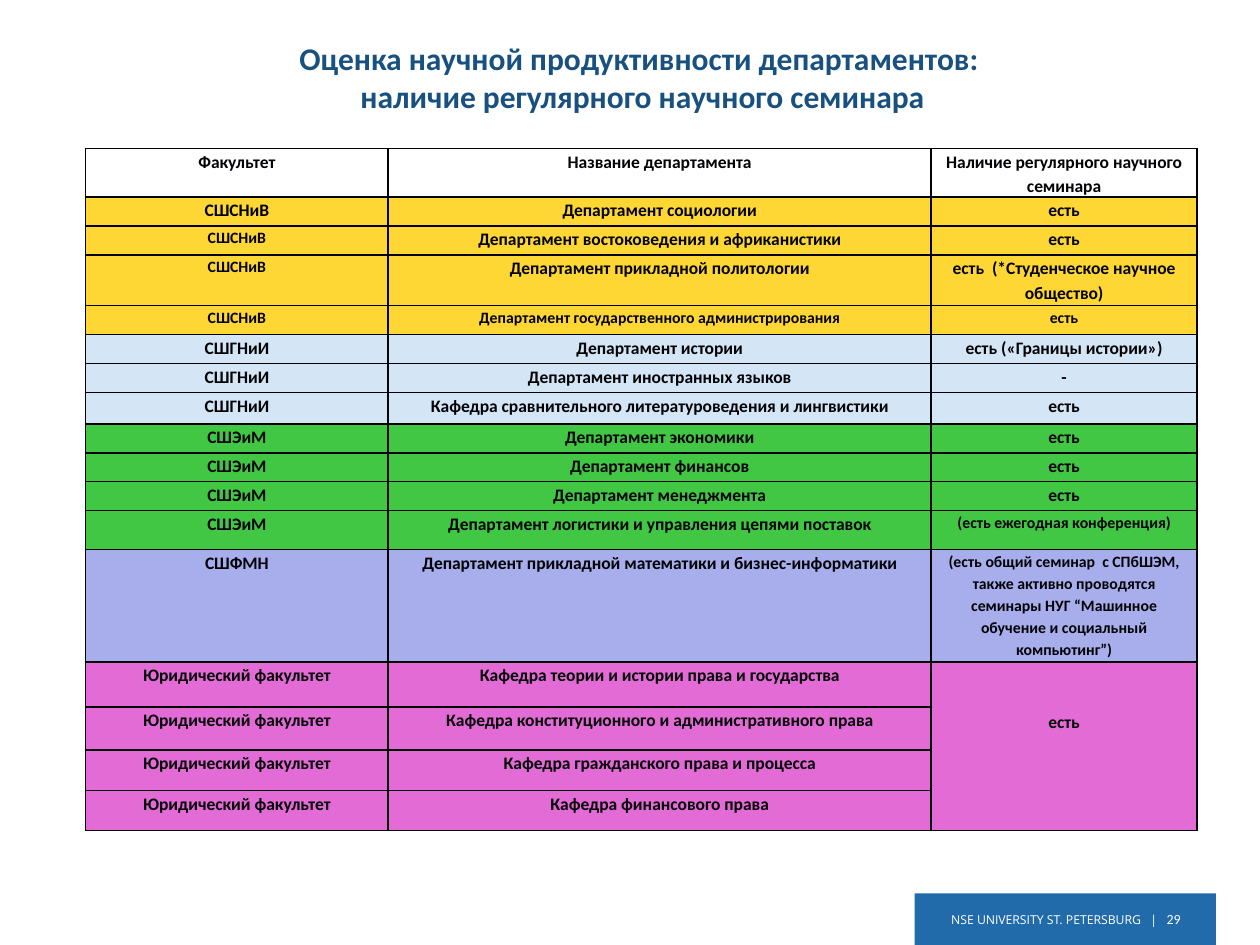
from lxml import etree
from pptx import Presentation
from pptx.dml.color import RGBColor
from pptx.enum.shapes import MSO_SHAPE
from pptx.enum.text import MSO_ANCHOR, PP_ALIGN
from pptx.oxml.ns import qn
from pptx.util import Inches, Pt

CENTER, RIGHT = PP_ALIGN.CENTER, PP_ALIGN.RIGHT
MIDDLE = MSO_ANCHOR.MIDDLE
RECTANGLE = MSO_SHAPE.RECTANGLE

COLORS = {
    "title": "185080",
    "footer": "216BAB",
    "white": "FFFFFF",
    "ink": "030306",
}
FACULTY_COLORS = {
    "Факультет": "FFFFFF",
    "СШСНиВ": "FED734",
    "СШГНиИ": "D4E6F6",
    "СШЭиМ": "41C743",
    "СШФМН": "A8ADEC",
    "Юридический факультет": "E36BD5",
}

TITLE = ["Оценка научной продуктивности департаментов: ",
         "наличие регулярного научного семинара"]

COLUMN_WIDTHS = [2.4, 4.31, 2.11]
# Row height, faculty, department, seminar
ROWS = [
    (0.27, "Факультет", "Название департамента", "Наличие регулярного научного семинара"),
    (0.23, "СШСНиВ", "Департамент социологии", "есть"),
    (0.23, "СШСНиВ", "Департамент востоковедения и африканистики", "есть"),
    (0.4, "СШСНиВ", "Департамент прикладной политологии",
     "есть  (*Студенческое научное общество)"),
    (0.23, "СШСНиВ", "Департамент государственного администрирования", "есть"),
    (0.23, "СШГНиИ", "Департамент истории", "есть («Границы истории»)"),
    (0.23, "СШГНиИ", "Департамент иностранных языков", "-"),
    (0.25, "СШГНиИ", "Кафедра сравнительного литературоведения и лингвистики", "есть"),
    (0.23, "СШЭиМ", "Департамент экономики", "есть"),
    (0.23, "СШЭиМ", "Департамент финансов", "есть"),
    (0.23, "СШЭиМ", "Департамент менеджмента", "есть"),
    (0.31, "СШЭиМ", "Департамент логистики и управления цепями поставок",
     "(есть ежегодная конференция)"),
    (0.89, "СШФМН", "Департамент прикладной математики и бизнес-информатики",
     "(есть общий семинар  с СПбШЭМ, также активно проводятся семинары НУГ "
     "“Машинное обучение и социальный компьютинг”)"),
    (0.36, "Юридический факультет", "Кафедра теории и истории права и государства", "есть"),
    (0.34, "Юридический факультет", "Кафедра конституционного и административного права", ""),
    (0.32, "Юридический факультет", "Кафедра гражданского права и процесса", ""),
    (0.32, "Юридический факультет", "Кафедра финансового права", ""),
]
LAW_START = 13
# Cells set one point smaller: (row, column)
SMALL_CELLS = {(2, 0), (3, 0), (4, 0), (4, 1), (4, 2), (11, 2), (12, 2)}


def style_span(span, size, color, font="Calibri", bold=False):
    span.font.name = font
    span.font.size = Pt(size)
    span.font.bold = bold
    span.font.color.rgb = RGBColor.from_string(color)


def add_text_box(page, left, top, width, height):
    box = page.shapes.add_textbox(Inches(left), Inches(top), Inches(width), Inches(height))
    box.text_frame.word_wrap = True
    return box.text_frame


def add_title(page):
    frame = add_text_box(page, 0.11, 0.26, 9.98, 0.71)
    frame.text = "\n".join(TITLE)
    for para in frame.paragraphs:
        para.alignment = CENTER
        style_span(para.runs[0], 18, COLORS["title"], bold=True)


def add_footer(page):
    bar = page.shapes.add_shape(RECTANGLE, Inches(7.26), Inches(7.09), Inches(2.39), Inches(0.42))
    bar.shadow.inherit = False
    bar.fill.solid()
    bar.fill.fore_color.rgb = RGBColor.from_string(COLORS["footer"])
    bar.line.fill.background()

    frame = add_text_box(page, 7.25, 7.21, 2.22, 0.2)
    frame.vertical_anchor = MIDDLE
    para = frame.paragraphs[0]
    para.alignment = RIGHT
    para.line_spacing = 0.7
    for text, size, font in [("NSE UNIVERSITY ST. PETERSBURG   |   ", 7, "Open Sans"),
                             ("29", 8, "Calibri")]:
        span = para.add_run()
        span.text = text
        style_span(span, size, COLORS["white"], font)


def set_borders(cell):
    properties = cell._tc.get_or_add_tcPr()
    for side in ("a:lnL", "a:lnR", "a:lnT", "a:lnB"):
        line = etree.SubElement(properties, qn(side), w=str(Pt(1)))
        fill = etree.SubElement(line, qn("a:solidFill"))
        etree.SubElement(fill, qn("a:srgbClr"), val=COLORS["ink"])


def fill_cell(cell, text, size, color):
    cell.margin_left = cell.margin_right = Inches(0.06)
    cell.margin_top = cell.margin_bottom = 0
    set_borders(cell)
    cell.fill.solid()
    cell.fill.fore_color.rgb = RGBColor.from_string(color)
    cell.text_frame.text = text
    para = cell.text_frame.paragraphs[0]
    para.alignment = CENTER
    para.line_spacing = 1.15
    para.font.size = Pt(size)
    for span in para.runs:
        style_span(span, size, COLORS["ink"], bold=True)


def add_seminar_table(page):
    height = sum(row[0] for row in ROWS)
    table = page.shapes.add_table(len(ROWS), len(COLUMN_WIDTHS), Inches(0.68), Inches(1.18),
                                  Inches(sum(COLUMN_WIDTHS)), Inches(height)).table
    for column, width in zip(table.columns, COLUMN_WIDTHS):
        column.width = Inches(width)
    for r, (row_height, *texts) in enumerate(ROWS):
        table.rows[r].height = Inches(row_height)
        for c, text in enumerate(texts):
            size = 9 if (r, c) in SMALL_CELLS else 10
            fill_cell(table.cell(r, c), text, size, FACULTY_COLORS[texts[0]])

    # One shared answer for the law departments
    shared = table.cell(LAW_START, 2)
    shared.merge(table.cell(len(ROWS) - 1, 2))
    shared.margin_top = Inches(0.37)


def main():
    deck = Presentation()
    deck.slide_width, deck.slide_height = Inches(10), Inches(7.5)
    page = deck.slides.add_slide(deck.slide_layouts[6])
    add_footer(page)
    add_title(page)
    add_seminar_table(page)
    deck.save("out.pptx")


if __name__ == "__main__":
    main()
